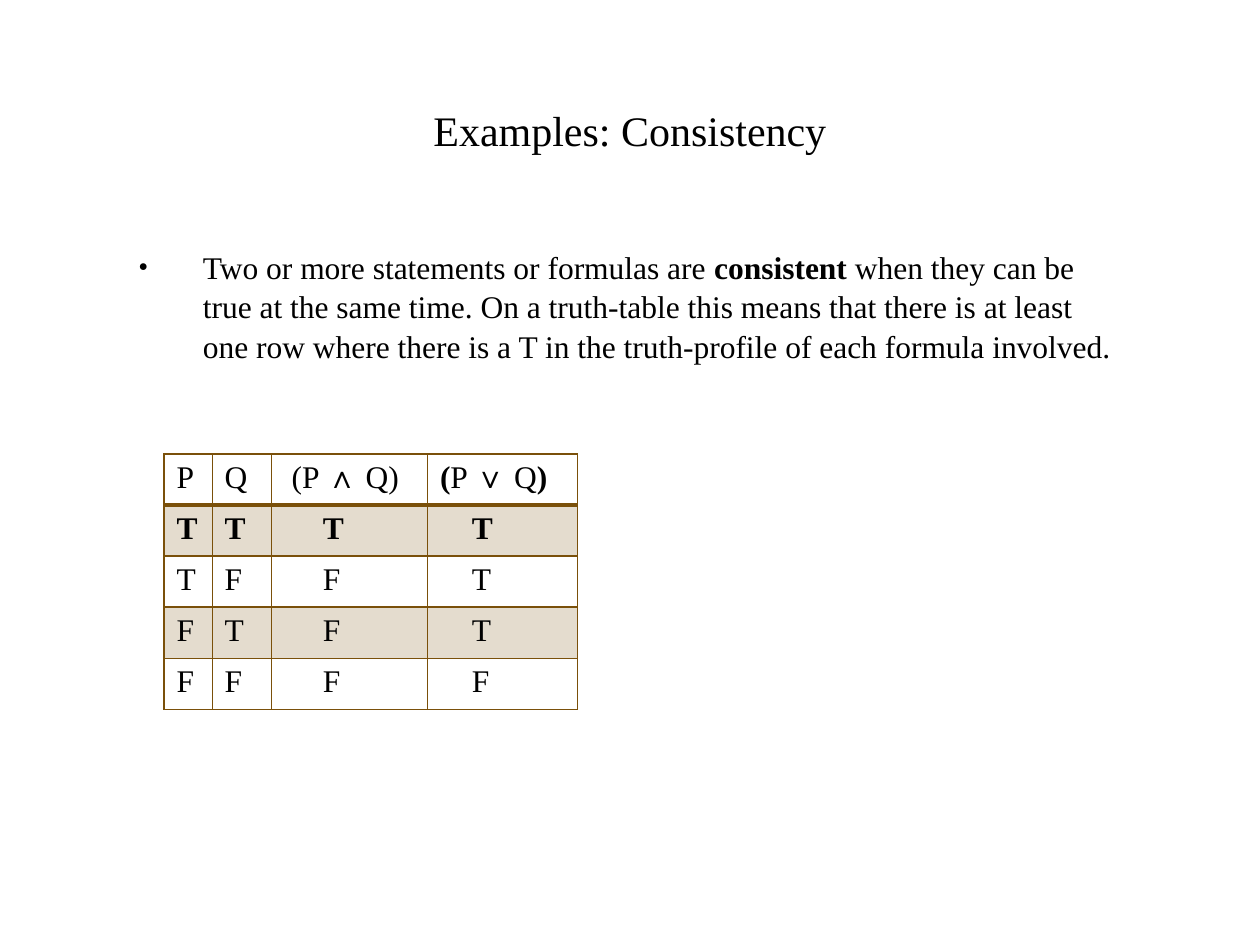
from dataclasses import dataclass

from lxml.etree import SubElement
from pptx import Presentation
from pptx.dml.color import RGBColor
from pptx.enum.text import MSO_ANCHOR, PP_ALIGN
from pptx.oxml.ns import qn
from pptx.util import Cm, Pt


@dataclass(frozen=True)
class Theme:
    face: str = "Times New Roman"
    ink: str = "000000"
    rule: str = "7A500A"
    head: int = 24
    text: int = 18
    tint: int = 20


THEME = Theme()
COLS = (0.97, 1.19, 3.15, 3.02)
PADS = (0.25, 0.25, 1.04, 0.89)
TOPS = (0.25, 0.25, 0.41, 0.25)
ROW = 1.03
HEADS = (
    [("P", False)],
    [("Q", False)],
    [("(P ∧ Q)", False)],
    [("(", True), ("P ∨ Q", False), (")", True)],
)
TRUTH = ("TTTT", "TFFT", "FTFT", "FFFF")


def apply(item, **vals):
    for name, val in vals.items():
        setattr(item, name, val)


def write(para, parts, size=THEME.text):
    for text, bold in parts:
        run = para.add_run()
        run.text = text
        apply(run.font, name=THEME.face, size=Pt(size), bold=bold)
        run.font.color.rgb = RGBColor.from_string(THEME.ink)


def title(slide, box):
    shape = slide.shapes.title
    apply(shape, **dict(zip(("left", "top", "width", "height"), map(Cm, box))))
    frame = shape.text_frame
    apply(frame, word_wrap=True, vertical_anchor=MSO_ANCHOR.MIDDLE)
    para = frame.paragraphs[0]
    para.alignment = PP_ALIGN.CENTER
    write(para, [("Examples: Consistency", False)], THEME.head)


def body(slide, box):
    frame = slide.shapes.add_textbox(*map(Cm, box)).text_frame
    frame.word_wrap = True
    para = frame.paragraphs[0]
    para.line_spacing = 1.05
    props = para._p.get_or_add_pPr()
    props.set("marL", str(Cm(1.3)))
    props.set("indent", str(-Cm(1.3)))
    SubElement(props, qn("a:buSzPct"), val="90000")
    SubElement(props, qn("a:buFont"), typeface=THEME.face)
    SubElement(props, qn("a:buChar"), char="•")
    write(para, [
        ("Two or more statements or formulas are ", False),
        ("consistent", True),
        (" when they can be true at the same time. On a truth-table this "
         "means that there is at least one row where there is a T in the "
         "truth-profile of each formula involved.", False),
    ])


def border(cell, sides):
    props = cell._tc.get_or_add_tcPr()
    for side, wide in sides.items():
        line = SubElement(props, qn(f"a:ln{side}"), w=str(Pt(wide)))
        fill = SubElement(line, qn("a:solidFill"))
        SubElement(fill, qn("a:srgbClr"), val=THEME.rule)


def shade(cell):
    cell.fill.solid()
    cell.fill.fore_color.rgb = RGBColor.from_string(THEME.rule)
    color = cell._tc.tcPr.find(qn("a:solidFill")).find(qn("a:srgbClr"))
    SubElement(color, qn("a:alpha"), val=str(THEME.tint * 1000))


def table(slide, left, top):
    rows = [HEADS] + [
        [[(mark, row == 0)] for mark in marks]
        for row, marks in enumerate(TRUTH)
    ]
    size = sum(COLS), ROW * len(rows)
    grid = slide.shapes.add_table(
        len(rows), len(COLS), *map(Cm, (left, top, *size))).table
    apply(grid, first_row=False, horz_banding=False)
    for col, wide in zip(grid.columns, COLS):
        col.width = Cm(wide)
    for row, cells in enumerate(rows):
        grid.rows[row].height = Cm(ROW)
        for col, parts in enumerate(cells):
            cell = grid.cell(row, col)
            pad = PADS[col] if row else TOPS[col]
            apply(cell, margin_left=Cm(pad), margin_right=Cm(0.1))
            border(cell, {"L": 1, "R": 1, "T": 2 if row == 1 else 1,
                          "B": 2 if row == 0 else 1})
            if row % 2:
                shade(cell)
            else:
                cell.fill.background()
            write(cell.text_frame.paragraphs[0], parts)


def main():
    deck = Presentation()
    apply(deck, slide_width=Cm(25.4), slide_height=Cm(19.05))
    slide = deck.slides.add_slide(deck.slide_layouts[5])
    title(slide, (2.54, 1.4, 20.32, 2.41))
    body(slide, (2.54, 4.83, 20.32, 11.28))
    table(slide, 3.31, 9.15)
    deck.save("out.pptx")


if __name__ == "__main__":
    main()
